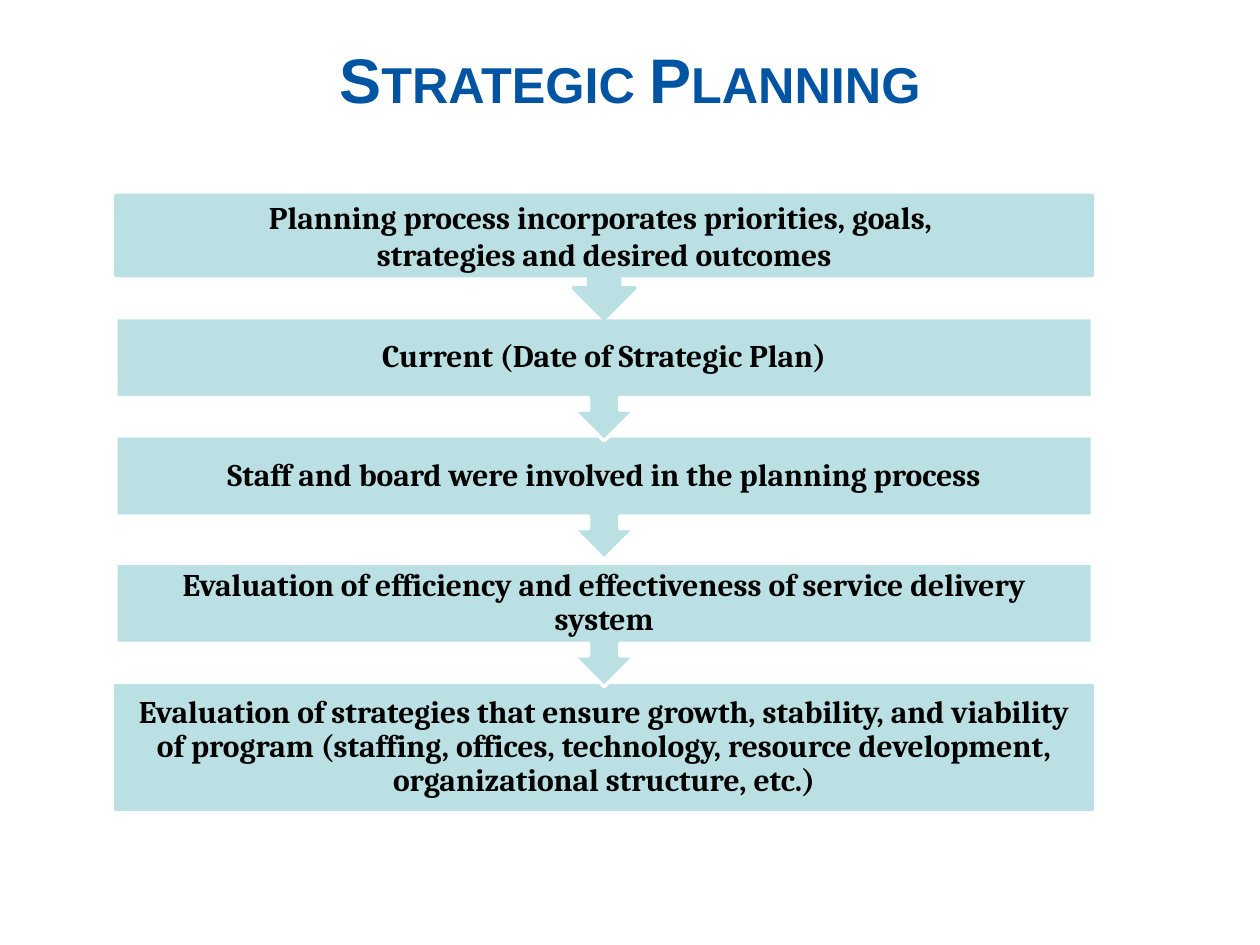
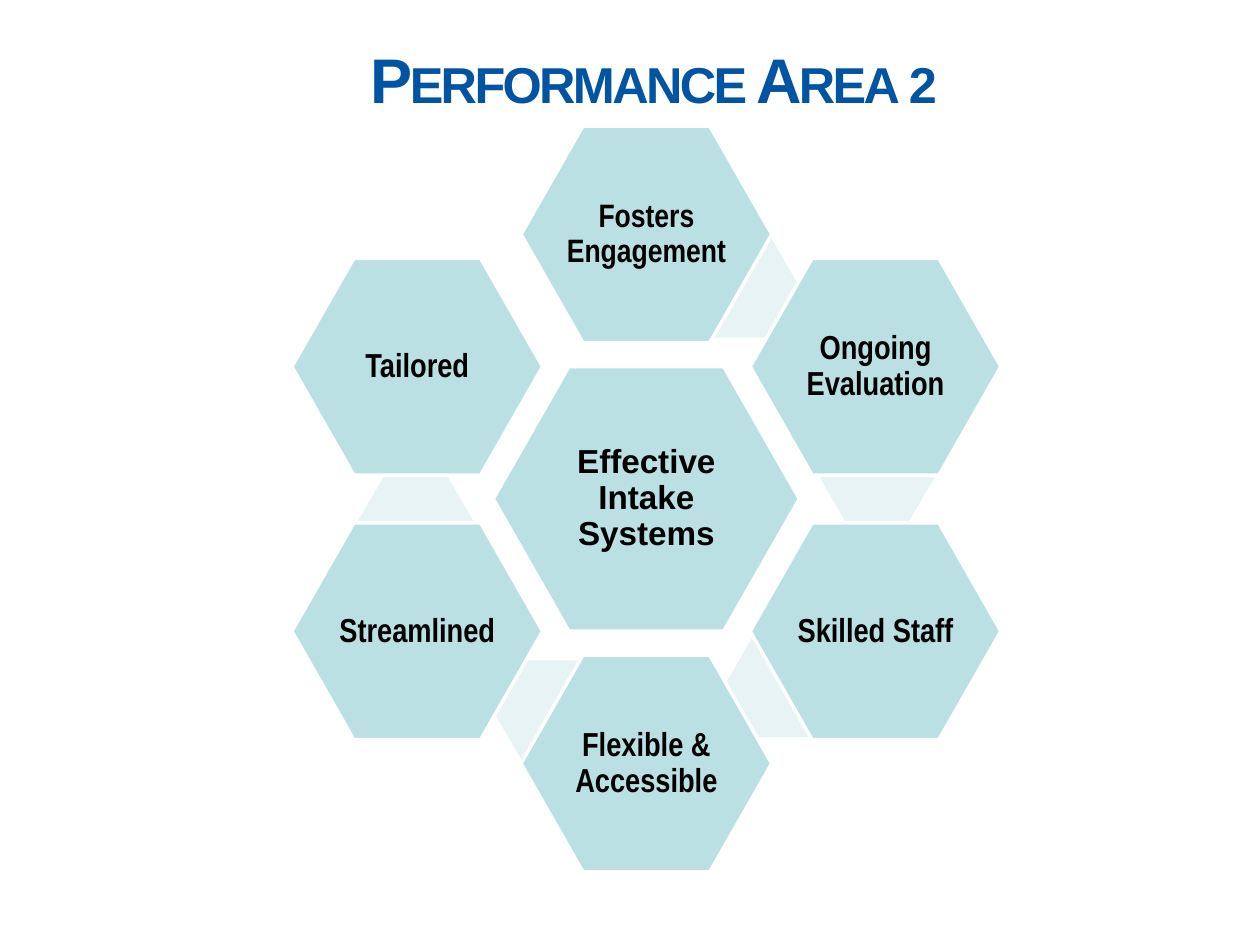
from dataclasses import dataclass
from math import cos, radians, sin
from typing import NamedTuple

from pptx import Presentation
from pptx.dml.color import RGBColor
from pptx.enum.shapes import MSO_SHAPE
from pptx.enum.text import MSO_ANCHOR as Anchor, PP_ALIGN as Align
from pptx.shapes.autoshape import Shape
from pptx.slide import Slide
from pptx.util import Inches, Pt

COLORS = {
    "title": "0054A2",
    "panel": "BBE0E3",
    "joint": "E7F3F4",
    "edge": "FFFFFF",
    "text": "000000",
}


class TextStyle(NamedTuple):
    font: str
    size: float
    color: str = "text"
    line_spacing: float = 0.9


@dataclass
class Step:
    text: str
    top: float
    edge: str = "edge"
    line_spacing: float = 0.9
    kind: MSO_SHAPE = MSO_SHAPE.DOWN_ARROW_CALLOUT


@dataclass
class Cell:
    """A hexagon holding text, with the insets of that text."""
    text: str
    width: float
    height: float
    inset_x: float
    inset_y: float
    style: TextStyle


TITLE_STYLE = TextStyle("Arial", 36, "title", 1.0)

STEP_LEFT, STEP_WIDTH, STEP_HEIGHT, STEP_INSET = 0.92, 7.75, 0.98, 0.14
STEPS = [
    Step("Planning process incorporates priorities, goals, \v"
         "strategies and desired outcomes", 1.55, "panel", 1.0),
    Step("Current (Date of Strategic Plan)", 2.52),
    Step("Staff and board were involved in the planning process", 3.46),
    Step("Evaluation of efficiency and effectiveness of service delivery system", 4.47),
    Step("Evaluation of strategies that ensure growth, stability, and viability of "
         "program (staffing, offices, technology, resource development, "
         "organizational structure, etc.)", 5.44, "panel", kind=MSO_SHAPE.RECTANGLE),
]

HUB_X, HUB_Y = 5.13, 3.96
RING_RADIUS, JOINT_RADIUS = 2.1, 1.84
RING_STEP, JOINT_TURN = 60, 24.4
JOINT_WIDTH, JOINT_HEIGHT = 0.92, 0.79
SHOULDER = 0.247  # share of a hexagon's width before its flat edge starts
HUB = Cell("Effective Intake Systems", 2.43, 2.1, 0.43, 0.37, TextStyle("Arial", 19))
RING = [("Fosters Engagement", 18.5), ("Ongoing Evaluation", 19), ("Skilled Staff", 19),
        ("Flexible & Accessible", 19), ("Streamlined", 19), ("Tailored", 19)]


def rgb(name: str) -> RGBColor:
    return RGBColor.from_string(COLORS[name])


def write(shape: Shape, text: str, style: TextStyle, inset_x: float, inset_y: float) -> None:
    frame = shape.text_frame
    frame.text = text
    frame.word_wrap = True
    frame.vertical_anchor = Anchor.MIDDLE
    frame.margin_left = frame.margin_right = Inches(inset_x)
    frame.margin_top = frame.margin_bottom = Inches(inset_y)
    paragraph = frame.paragraphs[0]
    paragraph.alignment = Align.CENTER
    paragraph.line_spacing = style.line_spacing
    for run in paragraph.runs:
        run.font.name = style.font
        run.font.size = Pt(style.size)
        run.font.bold = True
        run.font.color.rgb = rgb(style.color)


def paint(shape: Shape, fill: str, edge: str | None = None) -> None:
    shape.shadow.inherit = False
    shape.fill.solid()
    shape.fill.fore_color.rgb = rgb(fill)
    if edge is None:
        shape.line.fill.background()
    else:
        shape.line.color.rgb = rgb(edge)
        shape.line.width = Pt(2)


def add_title(slide: Slide, text: str, tracking: float = 0) -> None:
    """Small-caps heading; tracking is the letter spacing in points."""
    title = slide.shapes.add_textbox(Inches(0.75), 0, Inches(8.5), Inches(1.25))
    write(title, text, TITLE_STYLE, 0.1, 0.05)
    for run in title.text_frame.paragraphs[0].runs:
        properties = run.font._element
        properties.set("cap", "small")
        if tracking:
            properties.set("spc", str(round(tracking * 100)))


def add_step(slide: Slide, step: Step) -> None:
    panel = slide.shapes.add_shape(step.kind, Inches(STEP_LEFT), Inches(step.top),
                                   Inches(STEP_WIDTH), Inches(STEP_HEIGHT))
    paint(panel, "panel", step.edge)
    style = TextStyle("Cambria", 18, line_spacing=step.line_spacing)
    write(panel, step.text, style, STEP_INSET, STEP_INSET)


def around_hub(radius: float, degrees: float) -> tuple[float, float]:
    """Point on a circle about the hub, clockwise from the top."""
    angle = radians(degrees)
    return HUB_X + radius * sin(angle), HUB_Y - radius * cos(angle)


def add_cell(slide: Slide, cell: Cell, x: float, y: float) -> None:
    half, flat, rise = cell.width / 2, cell.width * (0.5 - SHOULDER), cell.height / 2
    corners = [(-half, 0), (-flat, -rise), (flat, -rise),
               (half, 0), (flat, rise), (-flat, rise)]
    points = [(Inches(x + dx), Inches(y + dy)) for dx, dy in corners]
    builder = slide.shapes.build_freeform(*points[0])
    builder.add_line_segments(points[1:], close=True)
    hexagon = builder.convert_to_shape()
    paint(hexagon, "panel", "edge")
    write(hexagon, cell.text, cell.style, cell.inset_x, cell.inset_y)


def add_joint(slide: Slide, x: float, y: float) -> None:
    joint = slide.shapes.add_shape(
        MSO_SHAPE.HEXAGON, Inches(x - JOINT_WIDTH / 2), Inches(y - JOINT_HEIGHT / 2),
        Inches(JOINT_WIDTH), Inches(JOINT_HEIGHT))
    joint.adjustments[0] = 0.29
    paint(joint, "joint")


def build_planning(slide: Slide) -> None:
    add_title(slide, "Strategic Planning")
    for step in reversed(STEPS):  # each arrow tip lies over the step below
        add_step(slide, step)


def build_performance(slide: Slide) -> None:
    add_title(slide, "Performance Area 2", tracking=-1.5)
    add_cell(slide, HUB, HUB_X, HUB_Y)
    for index, (text, size) in enumerate(RING):
        turn = index * RING_STEP
        if index < len(RING) - 1:
            add_joint(slide, *around_hub(JOINT_RADIUS, turn + JOINT_TURN))
        cell = Cell(text, 1.99, 1.72, 0.36, 0.31, TextStyle("Arial Narrow", size))
        add_cell(slide, cell, *around_hub(RING_RADIUS, turn))


def main() -> None:
    deck = Presentation()
    deck.slide_width, deck.slide_height = Inches(10), Inches(7.5)
    for build in (build_planning, build_performance):
        build(deck.slides.add_slide(deck.slide_layouts[6]))
    deck.save("out.pptx")


if __name__ == "__main__":
    main()
